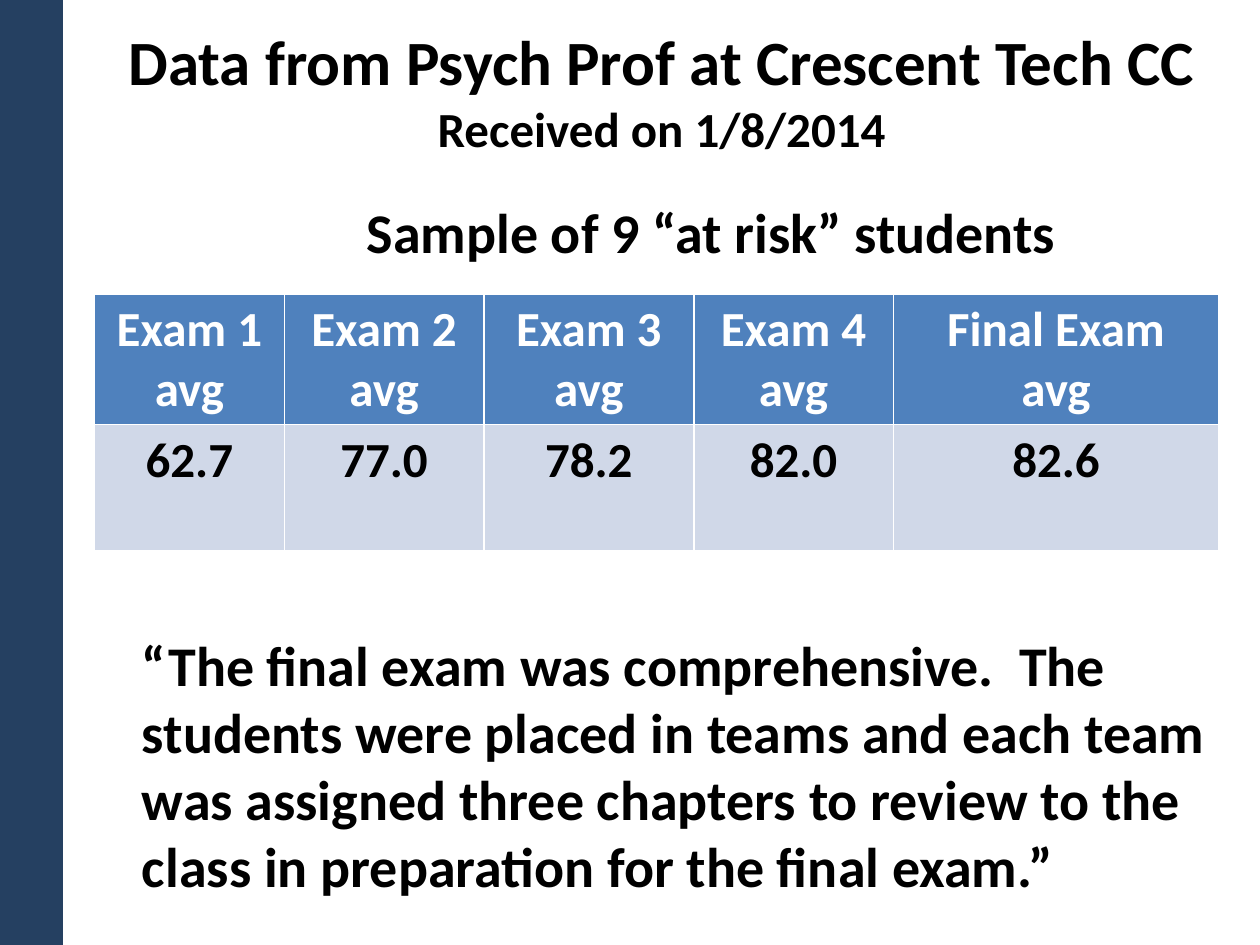
from lxml import etree
from pptx import Presentation
from pptx.dml.color import RGBColor
from pptx.enum.shapes import MSO_SHAPE
from pptx.enum.text import MSO_AUTO_SIZE, PP_ALIGN
from pptx.oxml.ns import qn
from pptx.util import Pt


def rgb(value):
    return RGBColor.from_string(value)


class Deck:
    font = "Calibri"
    black, white = "000000", "FFFFFF"
    navy, blue, pale = "254061", "4F81BD", "D0D8E8"

    def __init__(self, width, height):
        self.prs = Presentation()
        self.prs.slide_width, self.prs.slide_height = Pt(width), Pt(height)
        self.s = self.prs.slides.add_slide(self.prs.slide_layouts[6])

    def set_lines(self, tf, lines, color, align):
        for i, (text, size) in enumerate(lines):
            p = tf.paragraphs[0] if i == 0 else tf.add_paragraph()
            p.text = text
            p.alignment = align
            p.font.name = self.font
            p.font.size = Pt(size)
            p.font.bold = True
            p.font.color.rgb = rgb(color)

    def text(self, x, y, w, h, lines, align=PP_ALIGN.CENTER):
        sp = self.s.shapes.add_textbox(Pt(x), Pt(y), Pt(w), Pt(h))
        tf = sp.text_frame
        tf.word_wrap = True
        tf.auto_size = MSO_AUTO_SIZE.SHAPE_TO_FIT_TEXT
        self.set_lines(tf, lines, self.black, align)

    def bar(self, x, y, w, h):
        sp = self.s.shapes.add_shape(MSO_SHAPE.RECTANGLE, Pt(x), Pt(y), Pt(w), Pt(h))
        sp.shadow.inherit = False
        sp.fill.solid()
        sp.fill.fore_color.rgb = rgb(self.navy)
        sp.line.fill.background()

    def borders(self, cell):
        props = cell._tc.get_or_add_tcPr()
        for i, side in enumerate(("lnL", "lnR", "lnT", "lnB")):
            ln = etree.Element(qn(f"a:{side}"), w=str(Pt(1)))
            fill = etree.SubElement(ln, qn("a:solidFill"))
            etree.SubElement(fill, qn("a:srgbClr"), val=self.white)
            props.insert(i, ln)

    def table(self, x, y, widths, heights, rows, size):
        frame = self.s.shapes.add_table(
            len(rows), len(widths), Pt(x), Pt(y), Pt(sum(widths)), Pt(sum(heights)))
        table = frame.table
        for column, width in zip(table.columns, widths):
            column.width = Pt(width)
        for i, (height, row) in enumerate(zip(heights, rows)):
            table.rows[i].height = Pt(height)
            fill, color = (self.blue, self.white) if i == 0 else (self.pale, self.black)
            for j, lines in enumerate(row):
                cell = table.cell(i, j)
                cell.fill.solid()
                cell.fill.fore_color.rgb = rgb(fill)
                self.borders(cell)
                self.set_lines(cell.text_frame, [(line, size) for line in lines],
                               color, PP_ALIGN.CENTER)


def main():
    deck = Deck(720, 540)
    deck.text(36, 9.5, 684, 85, [
        ("Data from Psych Prof at Crescent Tech CC", 36),
        ("Received on 1/8/2014", 28),
    ])
    exams = ["Exam 1", "Exam 2", "Exam 3", "Exam 4", "Final Exam"]
    averages = ["62.7", "77.0", "78.2", "82.0", "82.6"]
    deck.table(54, 168, [108.5, 114, 120, 114, 186], [74, 72], [
        [(exam, "avg") for exam in exams],
        [(average,) for average in averages],
    ], 28)
    deck.text(74, 356.5, 646, 184, [(
        "“The final exam was comprehensive.  The students were placed in teams "
        "and each team was assigned three chapters to review to the class in "
        "preparation for the final exam.”", 32)], PP_ALIGN.LEFT)
    deck.text(193.5, 109.5, 426, 46, [("Sample of 9 “at risk” students", 32)])
    deck.bar(0, 0, 36, 540)
    deck.prs.save("out.pptx")


if __name__ == "__main__":
    main()
